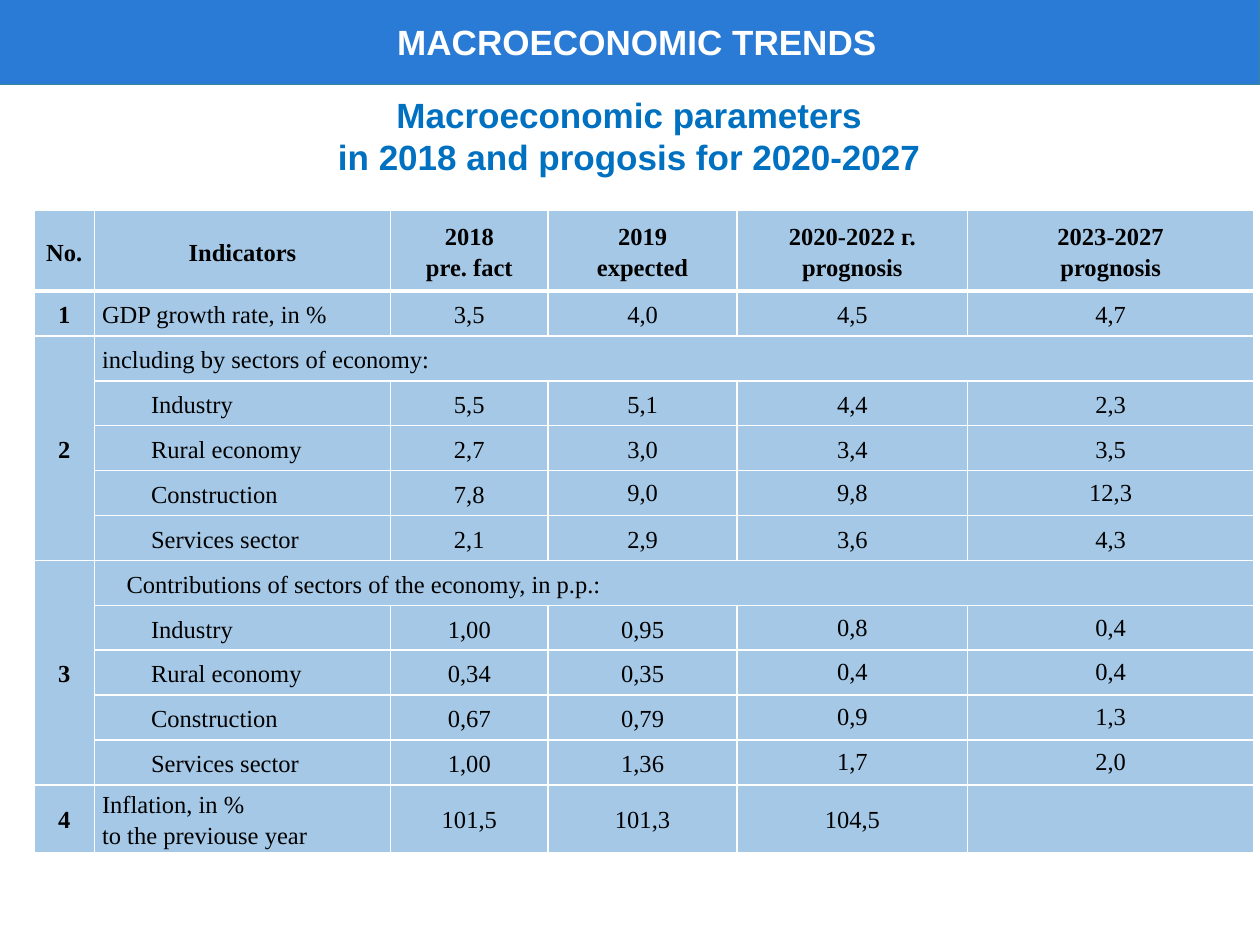
"""Build the macroeconomic trends slide with its table of indicators."""
import pptx
import pptx.dml.color
import pptx.enum.shapes
import pptx.enum.text
import pptx.oxml
import pptx.oxml.ns
import pptx.util
from lxml import etree

WIDTH, HEIGHT = pptx.util.Inches(10), pptx.util.Inches(7.5)
GRID_COLUMNS, GRID_ROWS = 1000, 750
ALIGN = pptx.enum.text.PP_ALIGN
ANCHOR = pptx.enum.text.MSO_ANCHOR

COLUMN_WIDTHS = [48, 235, 125, 150, 183, 227]
HEADER_HEIGHT, BODY_HEIGHT, LAST_HEIGHT = 64, 392 / 11, 53
SECTOR_INDENT, HEADING_INDENT = 28, 14
GROUP_ROWS = {2: 6, 7: 11}
ROWS = [
    ["No.", "Indicators", "2018\npre. fact", "2019\nexpected",
     "2020-2022 г.\nprognosis", "2023-2027\nprognosis"],
    ["1", "GDP growth rate, in %", "3,5", "4,0", "4,5", "4,7"],
    ["2", "including by sectors of economy:"],
    ["", "Industry", "5,5", "5,1", "4,4", "2,3"],
    ["", "Rural economy", "2,7", "3,0", "3,4", "3,5"],
    ["", "Construction", "7,8", "9,0", "9,8", "12,3"],
    ["", "Services sector", "2,1", "2,9", "3,6", "4,3"],
    ["3", "Contributions of sectors of the economy, in p.p.:"],
    ["", "Industry", "1,00", "0,95", "0,8", "0,4"],
    ["", "Rural economy", "0,34", "0,35", "0,4", "0,4"],
    ["", "Construction", "0,67", "0,79", "0,9", "1,3"],
    ["", "Services sector", "1,00", "1,36", "1,7", "2,0"],
    ["4", "Inflation, in %\nto the previouse year", "101,5", "101,3", "104,5", ""],
]


def across(columns):
    """Return the length of a number of grid columns."""
    return round(WIDTH * columns / GRID_COLUMNS)


def down(rows):
    """Return the length of a number of grid rows."""
    return round(HEIGHT * rows / GRID_ROWS)


def place(box):
    """Turn a box in grid units into left, top, width and height."""
    left, top, width, height = box
    return across(left), down(top), across(width), down(height)


def color(value):
    """Return the colour of a hex string."""
    return pptx.dml.color.RGBColor.from_string(value)


def write(frame, text, font_name, size, hex_color, bold, align=ALIGN.CENTER, spacing=1.0, indent=0):
    """Write each line of a text as a formatted paragraph."""
    frame.word_wrap = True
    frame.text = text
    for paragraph in frame.paragraphs:
        paragraph.alignment = align
        paragraph.line_spacing = spacing
        if indent:
            properties = paragraph._p.get_or_add_pPr()
            properties.set("marL", str(pptx.util.Pt(indent)))
            properties.set("indent", "0")
        font = paragraph.font
        font.name, font.size, font.bold = font_name, pptx.util.Pt(size), bold
        font.color.rgb = color(hex_color)


def add_banner(slide, box):
    """Draw the top band with its centred heading."""
    left, top, width, height = box
    band = slide.shapes.add_shape(pptx.enum.shapes.MSO_SHAPE.RECTANGLE, *place(box))
    band.shadow.inherit = False
    band.fill.solid()
    band.fill.fore_color.rgb = color("2A7BD5")
    band.line.color.rgb = color("3B8594")
    band.line.width = pptx.util.Pt(1)
    heading = slide.shapes.add_textbox(*place((left + 85, top + 12, width - 158, 44)))
    write(heading.text_frame, "MACROECONOMIC TRENDS", "Arial", 20, "FFFFFF", True)


def add_title(slide, box):
    """Place and format the title placeholder."""
    title = slide.shapes.title
    title.left, title.top, title.width, title.height = place(box)
    frame = title.text_frame
    frame.auto_size = pptx.enum.text.MSO_AUTO_SIZE.NONE
    frame.vertical_anchor = ANCHOR.TOP
    write(frame, "Macroeconomic parameters\nin 2018 and progosis for 2020-2027",
          "Arial", 20, "0070C0", True)


def set_border(cell, side, points):
    """Draw a white border on one side of a cell."""
    properties = cell._tc.get_or_add_tcPr()
    line = etree.SubElement(properties, pptx.oxml.ns.qn(f"a:ln{side}"), w=str(pptx.util.Pt(points)))
    fill = etree.SubElement(line, pptx.oxml.ns.qn("a:solidFill"))
    etree.SubElement(fill, pptx.oxml.ns.qn("a:srgbClr"), val="FFFFFF")


def format_cell(cell, row):
    """Give a cell its borders, fill, margins and anchor."""
    for side in "LRTB":
        beside_header = (row, side) in ((0, "B"), (1, "T"))
        set_border(cell, side, 3 if beside_header else 1)
    cell.fill.solid()
    cell.fill.fore_color.rgb = color("A4C8E6")
    cell.margin_left = cell.margin_right = across(6)
    cell.margin_top = cell.margin_bottom = 0
    cell.vertical_anchor = ANCHOR.MIDDLE


def write_cell(cell, row, column, text):
    """Write a cell's text in the style of its row and column."""
    is_label = row > 0 and column == 1
    is_sector = is_label and not ROWS[row][0]
    indent = SECTOR_INDENT if is_sector else HEADING_INDENT if is_label and row == 7 else 0
    is_tight = (row == 5 and column > 2) or (7 < row < 12 and column > 3)
    write(cell.text_frame, text, "Times New Roman", 14, "000000", row == 0 or column == 0,
          ALIGN.LEFT if is_label else ALIGN.CENTER, 1.0 if is_tight else 1.15, indent)


def add_indicators(slide, box):
    """Build the table of indicators with its merged group rows."""
    last_column = len(COLUMN_WIDTHS) - 1
    table = slide.shapes.add_table(len(ROWS), len(COLUMN_WIDTHS), *place(box)).table
    for column, width in zip(table.columns, COLUMN_WIDTHS):
        column.width = across(width)
    heights = [HEADER_HEIGHT] + [BODY_HEIGHT] * (len(ROWS) - 2) + [LAST_HEIGHT]
    for row, height in zip(table.rows, heights):
        row.height = down(height)
    for row, texts in enumerate(ROWS):
        for column in range(len(COLUMN_WIDTHS)):
            cell = table.cell(row, column)
            format_cell(cell, row)
            if column < len(texts) and texts[column]:
                write_cell(cell, row, column, texts[column])
    for first, last in GROUP_ROWS.items():
        table.cell(first, 0).merge(table.cell(last, 0))
        table.cell(first, 1).merge(table.cell(first, last_column))


def main():
    """Build and save the presentation."""
    presentation = pptx.Presentation()
    presentation.slide_width, presentation.slide_height = WIDTH, HEIGHT
    slide = presentation.slides.add_slide(presentation.slide_layouts[5])
    add_banner(slide, (-1, -1, 1001, 68))
    add_title(slide, (26, 69, 947, 77))
    add_indicators(slide, (27, 167, sum(COLUMN_WIDTHS), 509))
    presentation.save("out.pptx")


if __name__ == "__main__":
    main()
